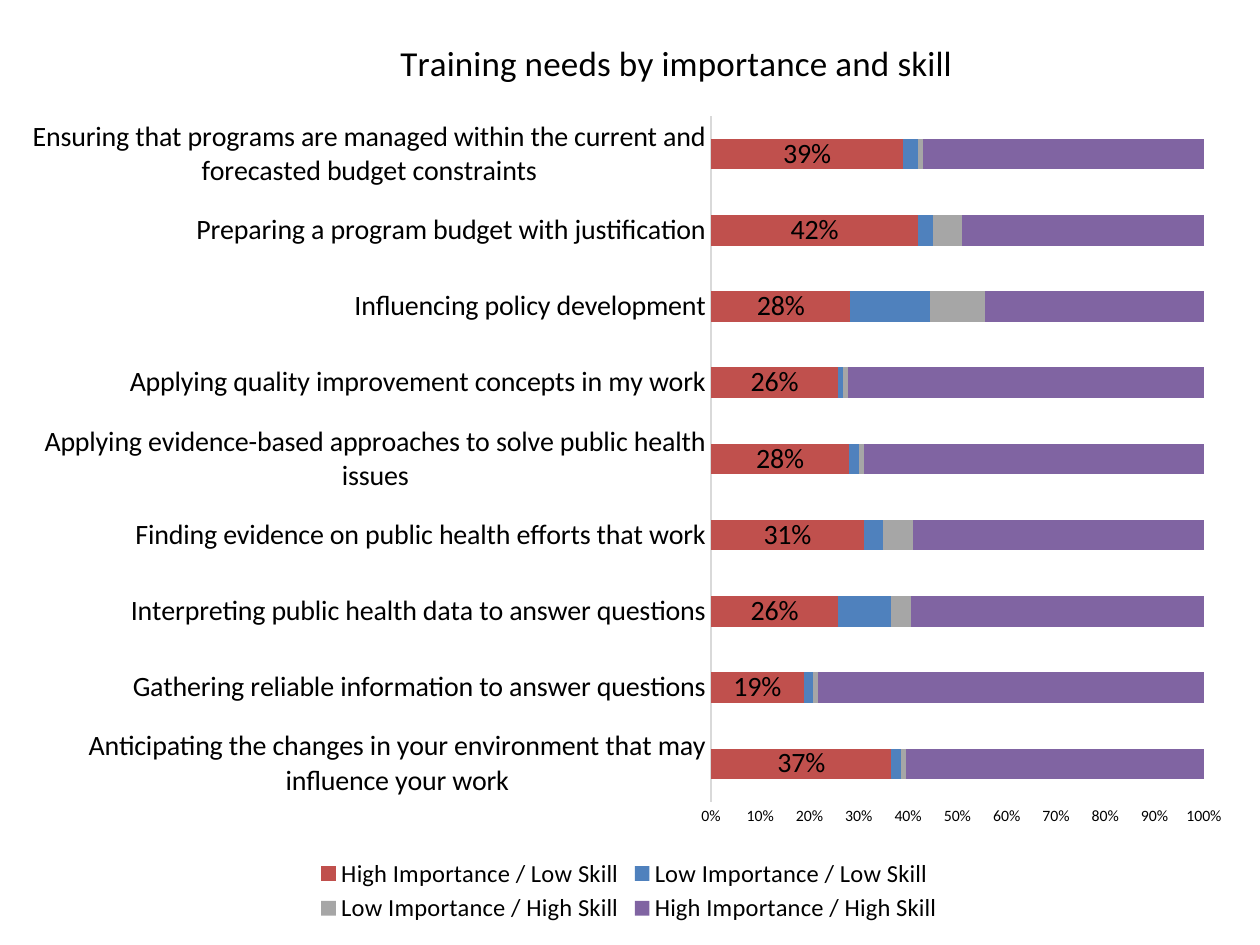
"""Build the slide with the chart of training needs by importance and skill."""
from typing import Any, NamedTuple

from lxml.etree import SubElement
from pptx import Presentation
from pptx.chart.data import CategoryChartData as ChartData
from pptx.dml.color import RGBColor as Rgb
from pptx.enum.chart import XL_CHART_TYPE as Kind
from pptx.enum.chart import XL_LABEL_POSITION as Spot
from pptx.enum.chart import XL_LEGEND_POSITION as Side
from pptx.enum.chart import XL_TICK_MARK as Tick
from pptx.oxml.ns import qn
from pptx.util import Pt

SCALE = 914400 / 126
FONT = "Calibri"
HUES = {
    "text": "000000",
    "axis": "D9D9D9",
    "red": "C0504D",
    "blue": "4F81BD",
    "gray": "A6A6A6",
    "plum": "8064A2",
}


class Box(NamedTuple):
    left: int
    top: int
    width: int
    height: int


class Group(NamedTuple):
    name: str
    hue: str
    vals: tuple[float, ...]


FRAME = Box(8, 9, 1239, 920)
PLOT = Box(711, 116, 493, 686)
TITLE = Box(394, 32, 0, 0)
LEGEND = Box(313, 854, 632, 74)

NEEDS = (
    "Anticipating the changes in your environment that may influence your work",
    "Gathering reliable information to answer questions",
    "Interpreting public health data to answer questions",
    "Finding evidence on public health efforts that work",
    "Applying evidence-based approaches to solve public health issues",
    "Applying quality improvement concepts in my work",
    "Influencing policy development",
    "Preparing a program budget with justification",
    "Ensuring that programs are managed within the current and forecasted budget constraints",
)
GROUPS = (
    Group("High Importance / Low Skill", "red",
          (0.37, 0.19, 0.26, 0.31, 0.28, 0.26, 0.28, 0.42, 0.39)),
    Group("Low Importance / Low Skill", "blue",
          (0.02, 0.02, 0.11, 0.04, 0.02, 0.01, 0.16, 0.03, 0.03)),
    Group("Low Importance / High Skill", "gray",
          (0.01, 0.01, 0.04, 0.06, 0.01, 0.01, 0.11, 0.06, 0.01)),
    Group("High Importance / High Skill", "plum",
          (0.61, 0.79, 0.6, 0.59, 0.69, 0.73, 0.44, 0.49, 0.57)),
)


def px(size: int) -> int:
    """Turn pixels into EMU."""
    return round(size * SCALE)


def ink(name: str) -> Rgb:
    """Look up a colour by name."""
    return Rgb.from_string(HUES[name])


def style(font: Any, size: int) -> None:
    """Set face, size and colour of a font."""
    font.name, font.size, font.bold = FONT, Pt(size), False
    font.color.rgb = ink("text")


def place(part: Any, box: Box, index: int, inner: bool = False) -> None:
    """Fix the place of a chart part within the frame."""
    for old in part.findall(qn("c:layout")):
        part.remove(old)
    layout = part.makeelement(qn("c:layout"))
    part.insert(index, layout)
    manual = SubElement(layout, qn("c:manualLayout"))
    rules = {"layoutTarget": "inner"} if inner else {}
    rules |= {"xMode": "edge", "yMode": "edge"}
    rules["x"] = f"{(box.left - FRAME.left) / FRAME.width:.4f}"
    rules["y"] = f"{(box.top - FRAME.top) / FRAME.height:.4f}"
    if box.width:
        rules["w"] = f"{box.width / FRAME.width:.4f}"
        rules["h"] = f"{box.height / FRAME.height:.4f}"
    for tag, val in rules.items():
        SubElement(manual, qn(f"c:{tag}")).set("val", val)


def set_axes(chart: Any) -> None:
    """Format both axes."""
    for axis, size in ((chart.category_axis, 16), (chart.value_axis, 9)):
        axis.major_tick_mark = axis.minor_tick_mark = Tick.NONE
        axis.has_major_gridlines = False
        style(axis.tick_labels.font, size)
    line = chart.category_axis.format.line
    line.color.rgb, line.width = ink("axis"), Pt(0.75)
    scale = chart.value_axis
    scale.format.line.fill.background()
    scale.minimum_scale, scale.maximum_scale, scale.major_unit = 0, 1, 0.1
    scale.tick_labels.number_format = "0%"
    scale.tick_labels.number_format_is_linked = False


def set_bars(chart: Any) -> None:
    """Colour the bars and label the first series."""
    plot = chart.plots[0]
    plot.gap_width, plot.overlap, plot.vary_by_categories = 150, 100, False
    for bars, group in zip(plot.series, GROUPS):
        bars.format.fill.solid()
        bars.format.fill.fore_color.rgb = ink(group.hue)
    labels = plot.series[0].data_labels
    labels.show_value, labels.position = True, Spot.CENTER
    labels.number_format, labels.number_format_is_linked = "0%", False
    style(labels.font, 16)


def set_text(chart: Any) -> None:
    """Format the title and the legend."""
    chart.has_title = True
    title = chart.chart_title
    title.include_in_layout = False
    para = title.text_frame.paragraphs[0]
    para.text = "Training needs by importance and skill"
    style(para.runs[0].font, 20)
    chart.has_legend = True
    legend = chart.legend
    legend.position, legend.include_in_layout = Side.BOTTOM, False
    style(legend.font, 14)


def main() -> None:
    """Make and save the deck."""
    deck = Presentation()
    deck.slide_width, deck.slide_height = px(1260), px(945)
    slide = deck.slides.add_slide(deck.slide_layouts[6])
    data = ChartData(number_format="0%")
    data.categories = NEEDS
    for group in GROUPS:
        data.add_series(group.name, group.vals)
    chart = slide.shapes.add_chart(
        Kind.BAR_STACKED_100, *map(px, FRAME), data).chart
    style(chart.font, 10)
    set_axes(chart)
    set_bars(chart)
    set_text(chart)
    area = chart.category_axis._element.getparent()
    place(area, PLOT, 0, inner=True)
    place(chart.chart_title._element, TITLE, 1)
    place(chart.legend._element, LEGEND, 1)
    deck.save("out.pptx")


if __name__ == "__main__":
    main()
